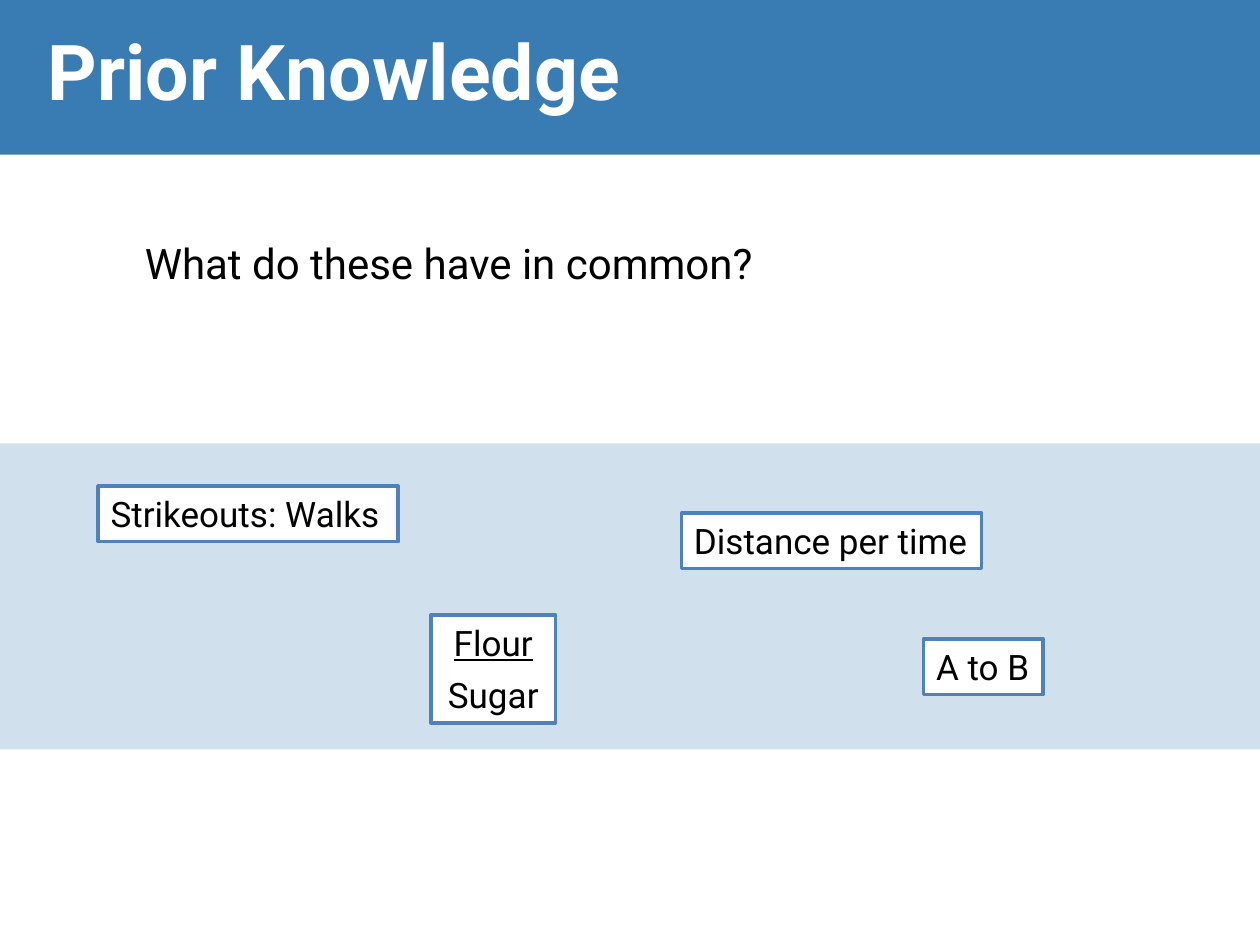
"""Build the Prior Knowledge slide."""
from lxml import etree
from pptx import Presentation
from pptx import util as u
from pptx.dml.color import RGBColor
from pptx.enum import shapes, text
from pptx.oxml import ns

BLUE, EDGE, WHITE, BLACK = "397CB3", "4F81BD", "FFFFFF", "000000"
LEFT, MID = text.PP_ALIGN.LEFT, text.PP_ALIGN.CENTER


def paint(item, code):
    """Give a fill a solid colour."""
    item.solid()
    item.fore_color.rgb = RGBColor.from_string(code)


def place(shape, spot):
    """Move and size a shape in centimetres."""
    shape.left, shape.top, shape.width, shape.height = map(u.Cm, spot)


def write(frame, lines, size, code=BLACK, bold=False, align=LEFT, gap=0):
    """Write (words, underline) lines, one paragraph each."""
    for i, (words, under) in enumerate(lines):
        para = frame.add_paragraph() if i else frame.paragraphs[0]
        para.alignment = align
        para.space_after = u.Pt(gap)
        run = para.add_run()
        run.text = words
        font = run.font
        font.name, font.size = "Roboto", u.Pt(size)
        font.bold, font.underline = bold, under
        paint(font.fill, code)


def block(slide, spot, code):
    """Add a plain filled rectangle."""
    shape = slide.shapes.add_shape(
        shapes.MSO_SHAPE.RECTANGLE, *map(u.Cm, spot))
    shape.shadow.inherit = False
    paint(shape.fill, code)
    shape.line.fill.background()
    return shape


def fade(shape, part):
    """Set the opacity of a solid fill in percent."""
    tint = shape.element.spPr.find(".//" + ns.qn("a:srgbClr"))
    etree.SubElement(tint, ns.qn("a:alpha"), val=str(part * 1000))


def card(slide, spot, lines, wrap=True, align=LEFT, gap=0):
    """Add a white card with a blue edge."""
    shape = block(slide, spot, WHITE)
    paint(shape.line.fill, EDGE)
    shape.line.width = u.Pt(2)
    frame = shape.text_frame
    frame.word_wrap = wrap
    frame.auto_size = text.MSO_AUTO_SIZE.SHAPE_TO_FIT_TEXT
    frame.vertical_anchor = text.MSO_ANCHOR.TOP
    write(frame, lines, 20, align=align, gap=gap)


def head(slide, words):
    """Format the title on its blue band."""
    title = slide.shapes.title
    place(title, (0.71, 0, 22.86, 2.79))
    title.text_frame.vertical_anchor = text.MSO_ANCHOR.MIDDLE
    write(title.text_frame, [(words, False)], 44, WHITE, bold=True)
    band = block(slide, (0, 0, 25.4, 3.12), BLUE)
    title.element.addprevious(band.element)


def ask(slide, words):
    """Add the question."""
    box = slide.shapes.add_textbox(*map(u.Cm, (2.67, 4.67, 20.9, 2.39)))
    box.text_frame.word_wrap = True
    write(box.text_frame, [(words, False)], 24, gap=12)


def main():
    """Build and save the slide."""
    deck = Presentation()
    deck.slide_width, deck.slide_height = u.Cm(25.4), u.Cm(19.05)
    slide = deck.slides.add_slide(deck.slide_layouts[5])
    head(slide, "Prior Knowledge")
    ask(slide, "What do these have in common?")
    fade(block(slide, (0, 8.94, 25.4, 6.17), BLUE), 23)
    card(slide, (1.98, 9.8, 6.05, 1.12), [("Strikeouts: Walks", False)])
    card(slide, (8.69, 12.4, 2.51, 2.18),
         [("Flour", True), ("Sugar", False)], align=MID, gap=6)
    card(slide, (13.74, 10.34, 6.05, 1.12),
         [("Distance per time", False)], wrap=False)
    card(slide, (18.62, 12.88, 2.41, 1.12), [("A to B", False)], wrap=False)
    deck.save("out.pptx")


if __name__ == "__main__":
    main()
